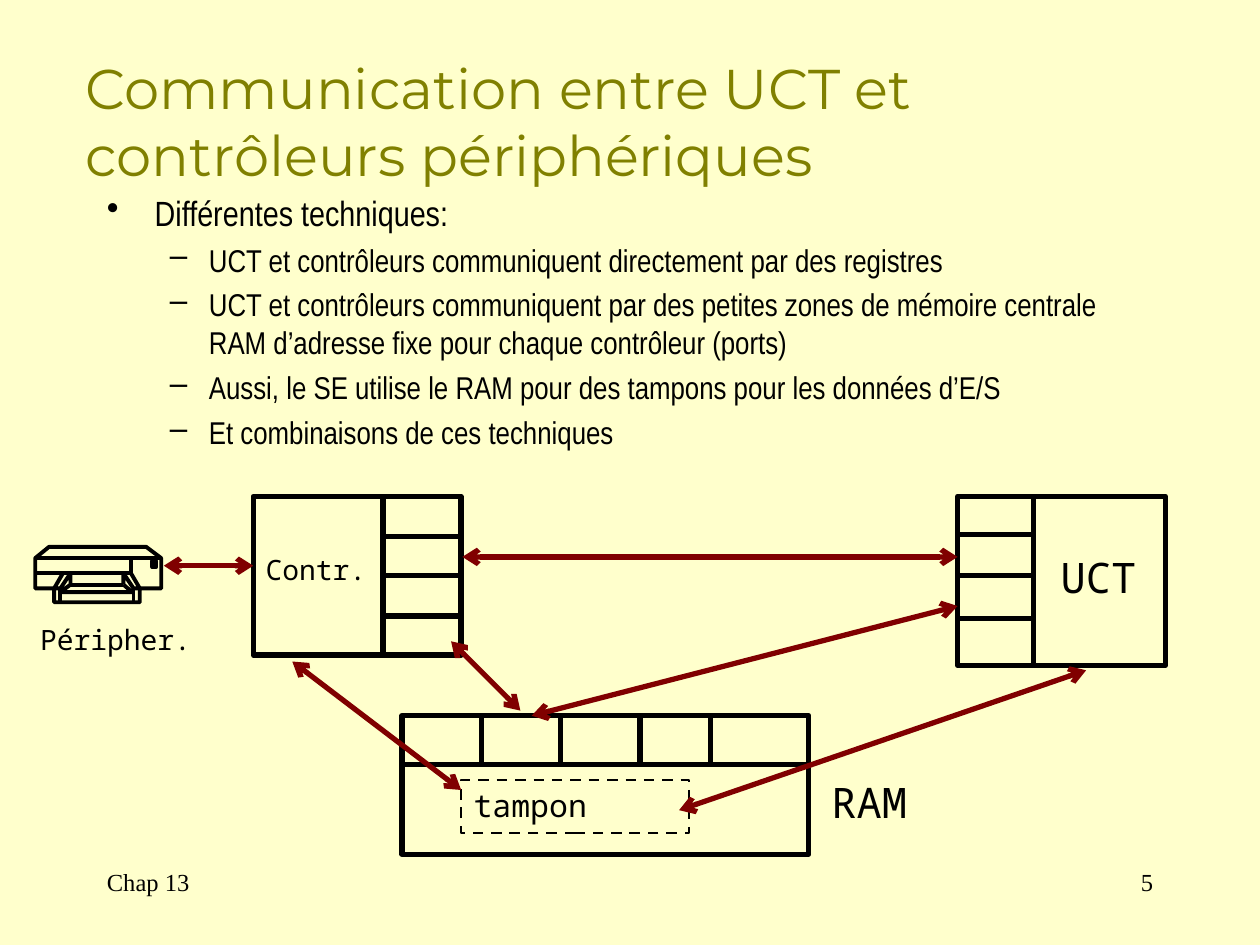
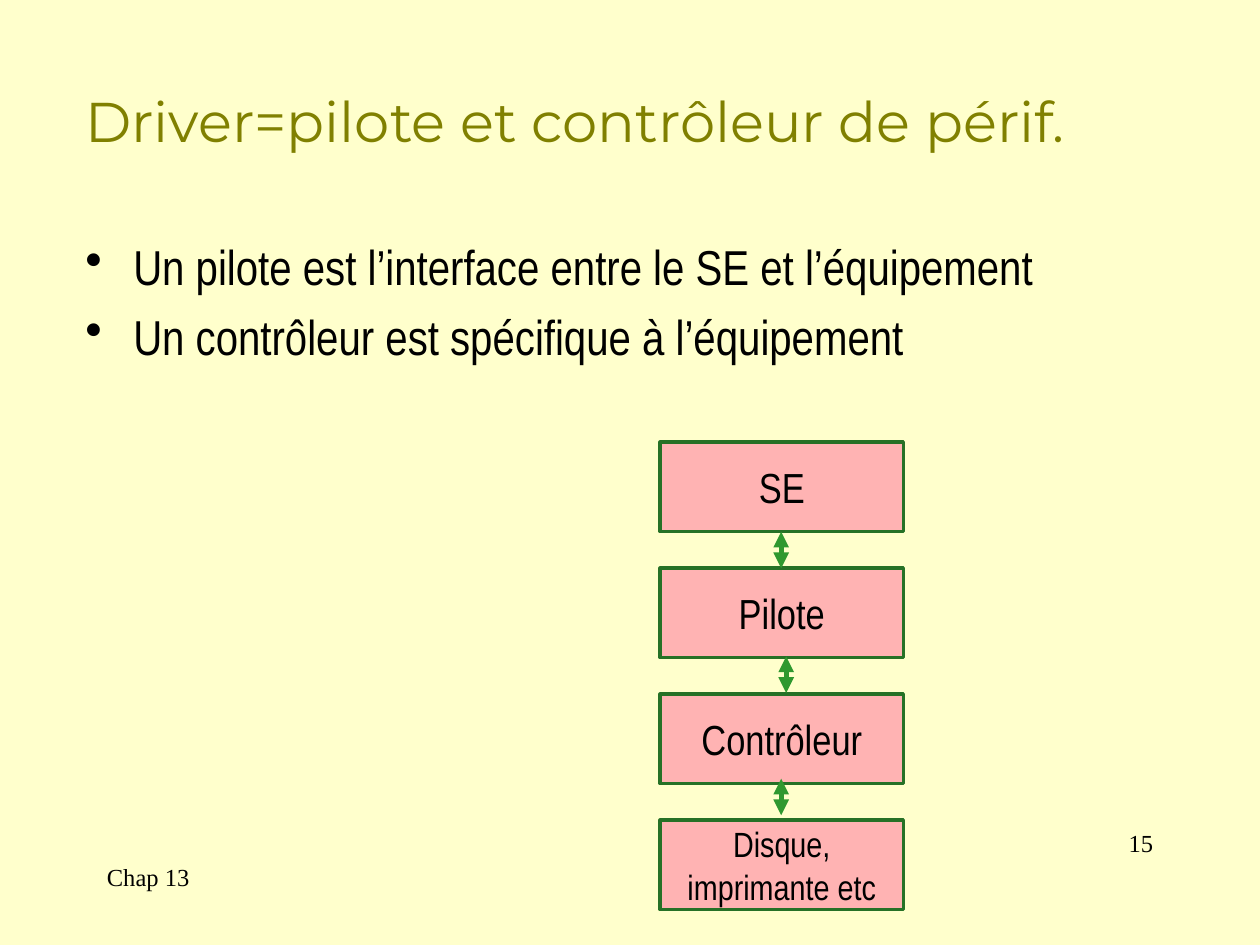
from lxml.etree import SubElement
from pptx import Presentation
from pptx.dml.color import RGBColor
from pptx.enum.dml import MSO_LINE
from pptx.enum.shapes import MSO_CONNECTOR, MSO_SHAPE
from pptx.enum.text import MSO_ANCHOR, PP_ALIGN
from pptx.oxml.ns import qn
from pptx.util import Emu, Pt

PX = 9144
PAPER, INK, OLIVE, MAROON = "FFFFCC", "000000", "808000", "800000"
PINK, DARK_GREEN, GREEN = "FFB3B3", "267126", "2F982F"
TITLE, BODY, MONO, FOOTER = "Montserrat", "Arial Narrow", "Noto Sans Mono", "Times New Roman"

PRINTER_CASE = [(77, 434), (116, 434), (128, 443), (128, 467), (111, 467), (111, 478),
                (43, 478), (43, 467), (28, 467), (28, 443), (39, 434)]
PRINTER_DETAILS = [
    [(28, 443), (128, 443)],
    [(104, 443), (104, 455), (28, 455)],
    [(48, 467), (48, 478)],
    [(106, 467), (106, 478)],
    [(98, 464), (98, 455), (106, 467), (111, 467), (104, 455)],
    [(98, 464), (105, 470), (48, 470), (56, 464), (56, 455), (48, 467), (43, 467), (50, 455)],
    [(121, 445), (124, 445), (124, 450), (121, 450), (121, 445)],
    [(56, 464), (98, 464)],
]


def px(length):
    """Turn hundredths of an inch into EMU."""
    return Emu(length * PX)


def color(value):
    """Turn a hex string into a colour."""
    return RGBColor.from_string(value)


def write(para, text, font=BODY, size=18, ink=INK, align=PP_ALIGN.LEFT):
    """Put one formatted span into a paragraph."""
    para.alignment = align
    span = para.add_run()
    span.text = text
    span.font.name = font
    span.font.size = Pt(size)
    span.font.color.rgb = color(ink)


class Deck:
    """Holds the shared style and the current page."""

    def __init__(self):
        """Start an empty 10 by 7.5 inch deck."""
        self.deck = Presentation()
        self.deck.slide_width, self.deck.slide_height = px(1000), px(750)
        self.page = None

    def new_page(self, title, number, chapter_top, number_top):
        """Add a page with its background, title and footers."""
        self.page = self.deck.slides.add_slide(self.deck.slide_layouts[6])
        fill = self.page.background.fill
        fill.solid()
        fill.fore_color.rgb = color(PAPER)
        self.text(title, 58, 33, 850, 125, anchor=MSO_ANCHOR.MIDDLE,
                  font=TITLE, size=32, ink=OLIVE)
        self.text("Chap 13", 75, chapter_top, 208, 50, font=FOOTER, size=14)
        self.text(number, 717, number_top, 208, 50, font=FOOTER, size=14, align=PP_ALIGN.RIGHT)

    def text(self, text, left, top, width, height, anchor=MSO_ANCHOR.TOP, wrap=True, **style):
        """Add a text box with one paragraph."""
        box = self.page.shapes.add_textbox(px(left), px(top), px(width), px(height))
        frame = box.text_frame
        frame.word_wrap = wrap
        frame.vertical_anchor = anchor
        write(frame.paragraphs[0], text, **style)

    def bullets(self, items, left, top, sizes):
        """Add a bulleted body from (level, text) pairs."""
        box = self.page.shapes.add_textbox(px(left), px(top), px(850), px(450))
        frame = box.text_frame
        frame.word_wrap = True
        for index, (level, text) in enumerate(items):
            para = frame.add_paragraph() if index else frame.paragraphs[0]
            margin, hang, mark = ((38, 38, "•"), (81, 31, "–"))[level]
            para.level = level
            if index:
                para.space_before = Pt(round(sizes[level] * 0.23, 1))
            write(para, text, size=sizes[level])
            properties = para._p.get_or_add_pPr()
            properties.set("marL", str(px(margin)))
            properties.set("indent", str(px(-hang)))
            SubElement(properties, qn("a:buChar")).set("char", mark)

    def finish(self, shape, fill, line, weight):
        """Set the fill and outline of a shape and drop its shadow."""
        shape.shadow.inherit = False
        if fill:
            shape.fill.solid()
            shape.fill.fore_color.rgb = color(fill)
        else:
            shape.fill.background()
        shape.line.color.rgb = color(line)
        shape.line.width = Pt(weight)

    def rectangle(self, left, top, width, height, text="", fill=None, line=INK, weight=3,
                  dash=None, anchor=MSO_ANCHOR.MIDDLE, **style):
        """Add a rectangle, with a label if given."""
        box = self.page.shapes.add_shape(MSO_SHAPE.RECTANGLE, px(left), px(top),
                                         px(width), px(height))
        self.finish(box, fill, line, weight)
        if dash:
            box.line.dash_style = dash
        if text:
            box.text_frame.word_wrap = True
            box.text_frame.vertical_anchor = anchor
            write(box.text_frame.paragraphs[0], text, **style)

    def line(self, x1, y1, x2, y2, ink=INK, head=None):
        """Add a straight line, with the same arrowhead at both ends if given."""
        link = self.page.shapes.add_connector(MSO_CONNECTOR.STRAIGHT, px(x1), px(y1),
                                              px(x2), px(y2))
        link.line.color.rgb = color(ink)
        link.line.width = Pt(3)
        if head:
            for end in ("a:headEnd", "a:tailEnd"):
                SubElement(link.line._ln, qn(end)).set("type", head)
        SubElement(link._element.spPr, qn("a:effectLst"))

    def outline(self, strokes, fill=None, close=False):
        """Add a freeform made of one or more strokes."""
        builder = self.page.shapes.build_freeform(*strokes[0][0], scale=PX)
        for index, (start, *points) in enumerate(strokes):
            if index:
                builder.move_to(*start)
            builder.add_line_segments(points, close=close)
        self.finish(builder.convert_to_shape(), fill, INK, 2.25)


def communication_page(deck):
    """Draw the links between processor, controller, device and memory."""
    deck.new_page("Communication entre UCT et contrôleurs périphériques", "5", 683, 683)
    deck.bullets([
        (0, "Différentes techniques:"),
        (1, "UCT et contrôleurs communiquent directement par des registres"),
        (1, "UCT et contrôleurs communiquent par des petites zones de mémoire centrale "
            "RAM d’adresse fixe pour chaque contrôleur (ports)"),
        (1, "Aussi, le SE utilise le RAM pour des tampons pour les données d’E/S"),
        (1, "Et combinaisons de ces techniques"),
    ], 75, 147, (20, 18))

    deck.rectangle(201, 394, 165, 126)
    deck.line(304, 394, 304, 520)
    for y in (426, 457, 489):
        deck.line(304, y, 367, y)

    deck.rectangle(319, 568, 323, 110)
    deck.line(319, 607, 642, 607)
    for x in (382, 445, 508, 564):
        deck.line(x, 568, x, 607)

    deck.rectangle(760, 394, 165, 134)
    deck.line(820, 394, 820, 527)
    for y in (424, 457, 491):
        deck.line(759, y, 822, y)

    deck.outline([PRINTER_CASE], fill=PAPER, close=True)
    deck.outline(PRINTER_DETAILS)

    deck.text("RAM", 650, 611, 228, 50, font=MONO, size=24)
    deck.text("UCT", 832, 433, 134, 50, font=MONO, size=24)
    deck.text("Contr.", 201, 434, 102, 37, font=MONO, size=16)
    deck.text("Péripher.", 22, 489, 140, 37, wrap=False, font=MONO, size=16)
    deck.rectangle(366, 619, 181, 42, "tampon", weight=1.5, dash=MSO_LINE.DASH,
                   anchor=MSO_ANCHOR.TOP, font=MONO, size=18)

    for ends in ((367, 442, 760, 442), (760, 481, 422, 568), (130, 449, 201, 449),
                 (358, 509, 413, 564), (232, 525, 366, 627), (862, 532, 539, 643)):
        deck.line(*ends, ink=MAROON, head="arrow")


def driver_page(deck):
    """Draw the stack from operating system down to device."""
    deck.new_page("Driver=pilote et contrôleur de périf.", "15", 679, 652)
    deck.bullets([
        (0, "Un pilote est l’interface entre le SE et l’équipement"),
        (0, "Un contrôleur est spécifique à l’équipement"),
    ], 58, 183, (28,))
    layers = (("SE", 24), ("Pilote", 24), ("Contrôleur", 24), ("Disque, imprimante etc", 20))
    for index, (name, size) in enumerate(layers):
        deck.rectangle(524, 351 + 100 * index, 193, 71, name, fill=PINK, line=DARK_GREEN,
                       weight=2, size=size, align=PP_ALIGN.CENTER)
    for x, y in ((620, 422), (624, 521), (620, 618)):
        deck.line(x, y, x, y + 29, ink=GREEN, head="triangle")


def main():
    """Build both pages and save the deck."""
    deck = Deck()
    communication_page(deck)
    driver_page(deck)
    deck.deck.save("out.pptx")


if __name__ == "__main__":
    main()
